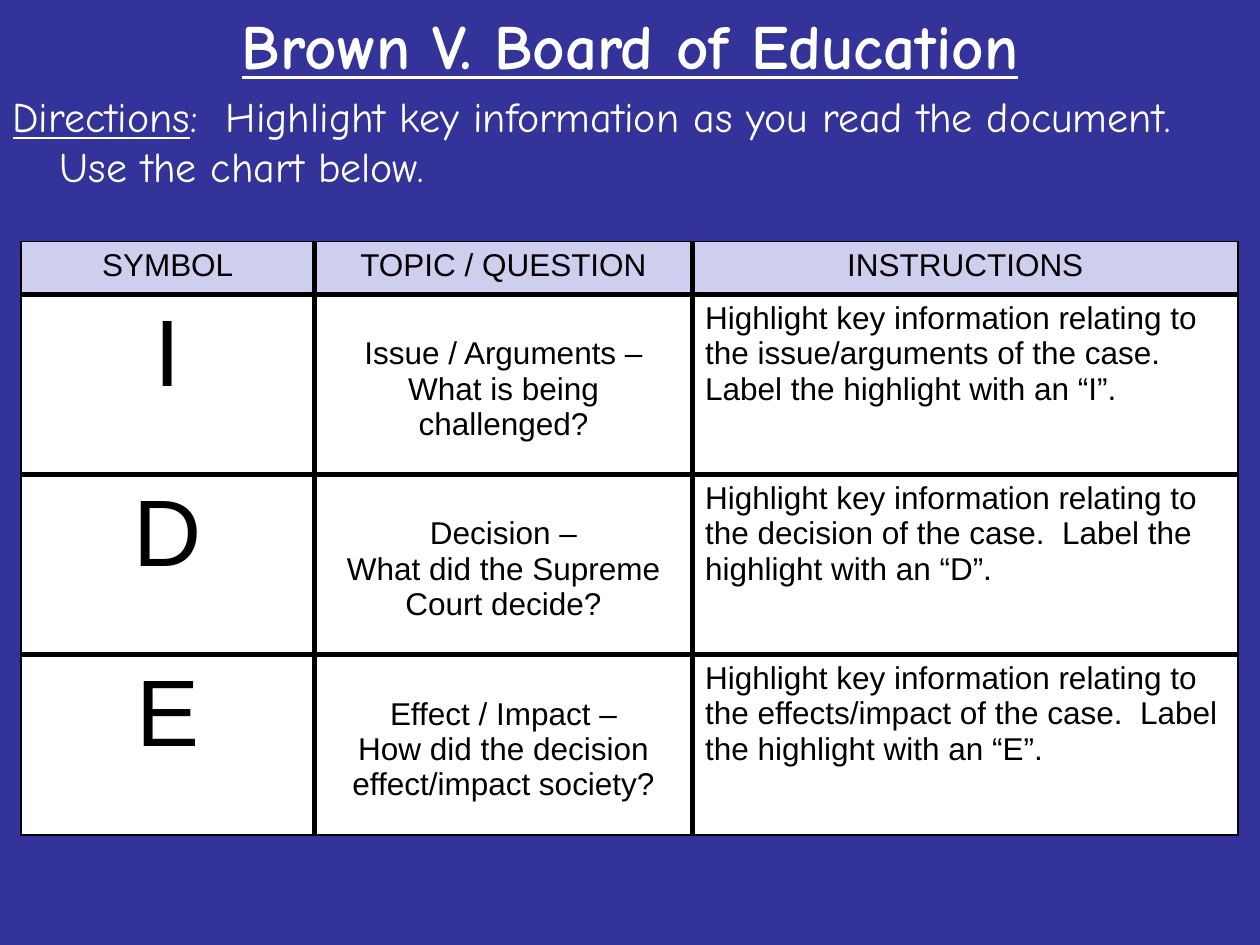
from lxml.etree import SubElement as Sub
from pptx import Presentation
from pptx.dml.color import RGBColor as Rgb
from pptx.enum.text import MSO_AUTO_SIZE as Fit, PP_ALIGN as Align
from pptx.oxml.ns import qn
from pptx.util import Cm, Pt

BLUE, LILAC, WHITE, BLACK = "333399", "CECEEF", "FFFFFF", "000000"
COLS = [5.92, 7.62, 11]
ROWS = [1.07, 3.63, 3.63, 3.63]
HEADS = ["SYMBOL", "TOPIC / QUESTION", "INSTRUCTIONS"]
CASES = [
    ["I", "Issue / Arguments –\nWhat is being challenged?",
     "Highlight key information relating to the issue/arguments of the case.  "
     "Label the highlight with an “I”."],
    ["D", "Decision –\nWhat did the Supreme Court decide?",
     "Highlight key information relating to the decision of the case.  "
     "Label the highlight with an “D”."],
    ["E", "Effect / Impact –\nHow did the decision effect/impact society?",
     "Highlight key information relating to the effects/impact of the case.  "
     "Label the highlight with an “E”."],
]


def paint(fill, color):
    fill.solid()
    fill.fore_color.rgb = Rgb.from_string(color)


def style(para, face, size, color, align=Align.LEFT):
    para.alignment = align
    font = para.font
    font.name, font.size = face, Pt(size)
    paint(font.fill, color)


def add_intro(slide):
    slide.shapes.title.element.getparent().remove(slide.shapes.title.element)
    body = slide.placeholders[1]
    body.left, body.top, body.width, body.height = 0, 0, Cm(25.4), Cm(4.24)
    frame = body.text_frame
    frame.auto_size = Fit.NONE
    title, guide = frame.paragraphs[0], frame.add_paragraph()

    title.text = "Brown V. Board of Education"
    style(title, "Comic Neue", 36, WHITE, Align.CENTER)
    title.font.bold = title.font.underline = True

    label = guide.add_run()
    label.text = "Directions"
    label.font.underline = True
    guide.add_run().text = (":  Highlight key information as you read the "
                            "document.  Use the chart below.")
    style(guide, "Comic Neue", 24, WHITE)
    for para in frame.paragraphs:
        props = para._p.get_or_add_pPr()
        props.insert(0, props.makeelement(qn("a:buNone")))


def set_edges(cell, row, col):
    """Draw thin lines on the outside of the table and thick ones inside."""
    outer = {"L": col == 0, "R": col == len(COLS) - 1,
             "T": row == 0, "B": row == len(ROWS) - 1}
    props = cell._tc.get_or_add_tcPr()
    for side, thin in outer.items():
        line = Sub(props, qn("a:ln" + side), w=str(Pt(1 if thin else 3)))
        fill = Sub(line, qn("a:solidFill"))
        Sub(fill, qn("a:srgbClr"), val=BLACK)


def fill_cell(cell, text, row, col):
    set_edges(cell, row, col)
    paint(cell.fill, WHITE if row else LILAC)
    cell.text = text
    if row and col == 1:
        cell.margin_top = Cm(0.84)
    size = 54 if row and col == 0 else 18
    align = Align.LEFT if row and col == 2 else Align.CENTER
    for para in cell.text_frame.paragraphs:
        style(para, "Arial", size, BLACK, align)


def add_chart_table(slide):
    table = slide.shapes.add_table(
        len(ROWS), len(COLS), Cm(0.42), Cm(4.87),
        Cm(sum(COLS)), Cm(sum(ROWS))).table
    table.first_row = table.horz_banding = False
    for col, width in zip(table.columns, COLS):
        col.width = Cm(width)
    for row, height in zip(table.rows, ROWS):
        row.height = Cm(height)
    for r, texts in enumerate([HEADS, *CASES]):
        for c, text in enumerate(texts):
            fill_cell(table.cell(r, c), text, r, c)


def main():
    deck = Presentation()
    deck.slide_width, deck.slide_height = Cm(25.4), Cm(19.05)
    slide = deck.slides.add_slide(deck.slide_layouts[1])
    paint(slide.background.fill, BLUE)
    add_intro(slide)
    add_chart_table(slide)
    deck.save("out.pptx")


if __name__ == "__main__":
    main()
